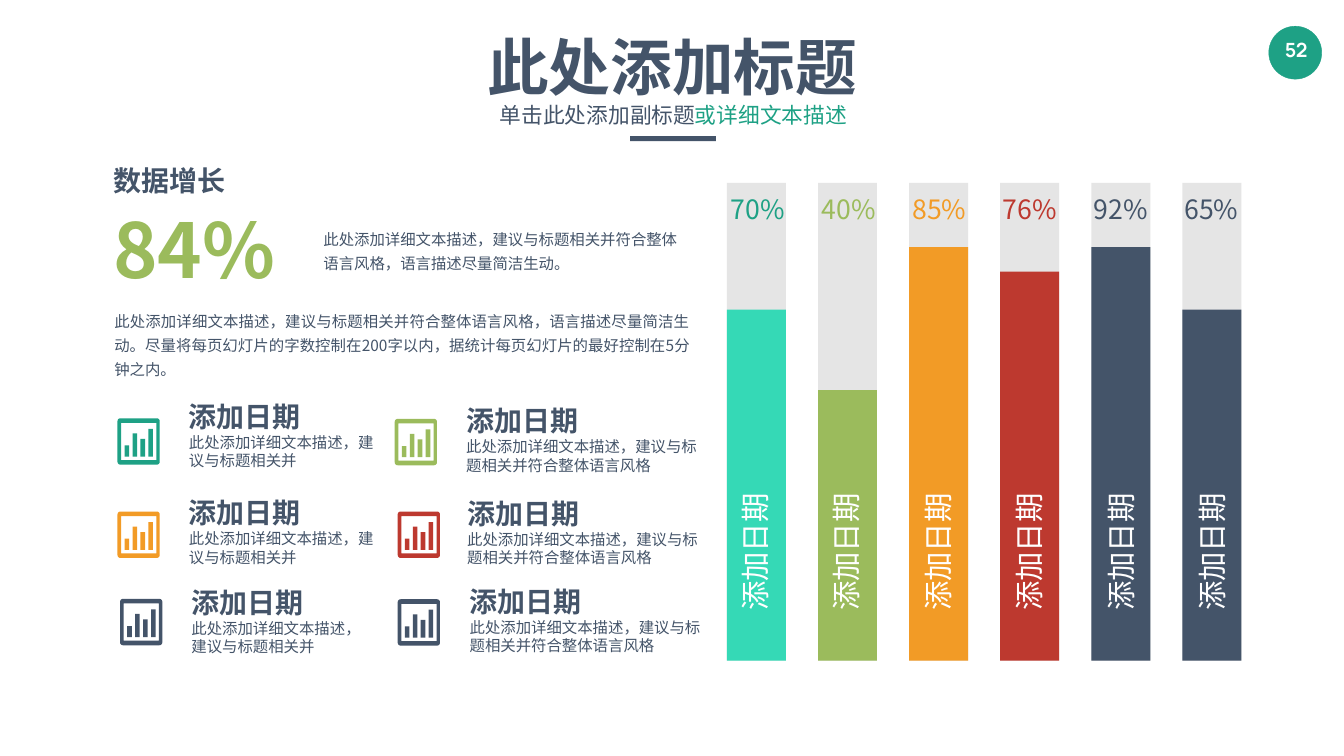
from math import cos, pi, sin

from lxml.etree import SubElement
from pptx import Presentation
from pptx.dml.color import RGBColor
from pptx.enum.shapes import MSO_SHAPE as Shape
from pptx.enum.text import MSO_ANCHOR as Anchor, MSO_AUTO_SIZE as AutoSize, PP_ALIGN as Align
from pptx.oxml.ns import qn
from pptx.util import Cm, Pt

COLORS = {
    "teal": "1EA185", "mint": "35D9B6", "green": "9BBB5C", "orange": "F29B26",
    "red": "BD392F", "navy": "445469", "track": "E5E5E5", "white": "FFFFFF",
}
DATE = "添加日期"
DETAIL = "此处添加详细文本描述，建议与标题相关并"
LONG_DETAIL = DETAIL + "符合整体语言风格"
SENTENCE = LONG_DETAIL + "，语言描述尽量简洁生动。"


def rgb(color):
    return RGBColor.from_string(COLORS[color])


def rectangle(left, top, right, bottom):
    return [(left, top), (right, top), (right, bottom), (left, bottom)]


def rounded_rectangle(width, height, radius, steps=4):
    corners = [(width - radius, height - radius), (radius, height - radius),
               (radius, radius), (width - radius, radius)]
    return [
        (x + radius * cos(angle), y + radius * sin(angle))
        for quarter, (x, y) in enumerate(corners)
        for angle in (pi / 2 * (quarter + step / steps) for step in range(steps + 1))
    ]


ICON_CONTOURS = [rounded_rectangle(2.13, 2.34, 0.15), rectangle(0.18, 0.23, 1.96, 2.11)] + [
    rectangle(0.36 + 0.4 * column, top, 0.59 + 0.4 * column, 1.93)
    for column, top in enumerate((1.37, 0.76, 1.04, 0.53))
]


class Deck:
    """Hold the text style and the current slide, and draw each kind of element."""

    font = "Noto Sans CJK SC"
    color = "navy"

    def __init__(self, slide):
        self.shapes = slide.shapes

    def paint(self, shape, color, outline=None):
        shape.shadow.inherit = False
        shape.fill.solid()
        shape.fill.fore_color.rgb = rgb(color)
        if outline:
            shape.line.color.rgb = rgb(color)
            shape.line.width = Pt(outline)
        else:
            shape.line.fill.background()

    def block(self, left, top, width, height, color, kind=Shape.RECTANGLE, outline=None):
        lengths = map(Cm, (left, top, width, height))
        self.paint(self.shapes.add_shape(kind, *lengths), color, outline)

    def icon(self, left, top, color):
        contours = [[(Cm(left + x), Cm(top + y)) for x, y in contour] for contour in ICON_CONTOURS]
        outline = self.shapes.build_freeform(*contours[0][0])
        for contour in contours:
            outline.move_to(*contour[0])
            outline.add_line_segments(contour[1:], close=True)
        self.paint(outline.convert_to_shape(), color)

    def text(self, text, box, size, color=None, font=None, bold=False, align=None, anchor=Anchor.TOP,
             insets=(0.25, 0.13), spacing=None, wrap=True, grow=True, rotation=0, tail=None):
        label = self.shapes.add_textbox(*map(Cm, box))
        label.rotation = rotation
        frame = label.text_frame
        frame.word_wrap = wrap
        frame.auto_size = AutoSize.SHAPE_TO_FIT_TEXT if grow else AutoSize.NONE
        frame.vertical_anchor = anchor
        frame.margin_left = frame.margin_right = Cm(insets[0])
        frame.margin_top = frame.margin_bottom = Cm(insets[1])
        paragraph = frame.paragraphs[0]
        paragraph.alignment = align
        paragraph.line_spacing = spacing
        parts = [(text, color or self.color)] + ([tail] if tail else [])
        for words, shade in parts:
            run = paragraph.add_run()
            run.text = words
            run.font.size, run.font.bold = Pt(size), bold
            run.font.color.rgb = rgb(shade)
            run.font.name = font or self.font
            SubElement(run.font._element, qn("a:ea"), typeface=run.font.name)

    def bar(self, index, percent, height, color, percent_color):
        left, top, width, track = 36.63 + 4.59 * index, 9.22, 2.97, 24.08
        self.block(left, top, width, track, "track")
        self.block(left, top + track - height, width, height, color)
        middle = {"anchor": Anchor.MIDDLE, "insets": (0.33, 0)}
        self.text(DATE, (33.09 + 4.61 * index, 25.27, 9.86, 1.83), 42, "white", rotation=270, **middle)
        self.text(percent, (36.02 + 4.57 * index, 9.73, 4.34, 1.63), 38, percent_color,
                  align=Align.CENTER, **middle)

    def item(self, icon_at, text_at, width, detail, color):
        left, top = text_at
        self.text(DATE, (left, top, 6.22, 1.96), 40, bold=True, wrap=False)
        self.text(detail, (left, top + 1.7, width, 2.13), 22)
        self.icon(*icon_at, color)


def main():
    presentation = Presentation()
    presentation.slide_width, presentation.slide_height = Cm(67.72), Cm(38.1)
    deck = Deck(presentation.slides.add_slide(presentation.slide_layouts[6]))

    deck.block(63.93, 1.32, 2.67, 2.67, "teal", Shape.OVAL, outline=0.5)
    deck.text("52", (64.08, 1.68, 2.46, 1.7), 28, "white", "Manrope", bold=True,
              align=Align.CENTER, insets=(0.51, 0.25), wrap=False)

    bars = [
        ("70%", 17.7, "mint", "teal"),
        ("40%", 13.64, "green", "green"),
        ("85%", 20.85, "orange", "orange"),
        ("76%", 19.61, "red", "red"),
        ("92%", 20.85, "navy", "navy"),
        ("65%", 17.7, "navy", "navy"),
    ]
    for index, values in enumerate(bars):
        deck.bar(index, *values)

    items = [
        ((5.92, 21.08), (9.27, 19.99), 9.96, DETAIL, "teal"),
        ((19.89, 21.11), (23.24, 20.22), 12.45, LONG_DETAIL, "green"),
        ((5.92, 25.78), (9.27, 24.84), 9.96, DETAIL, "orange"),
        ((20.04, 25.78), (23.29, 24.87), 12.45, LONG_DETAIL, "red"),
        ((6.05, 30.18), (9.4, 29.36), 9.75, DETAIL, "navy"),
        ((20.04, 30.2), (23.42, 29.31), 12.45, LONG_DETAIL, "navy"),
    ]
    for values in items:
        deck.item(*values)

    deck.text(SENTENCE + "尽量将每页幻灯片的字数控制在200字以内，据统计每页幻灯片的最好控制在5分钟之内。",
              (5.51, 15.32, 29.49, 3.91), 22, align=Align.JUSTIFY, spacing=1.3)
    deck.text("数据增长", (5.46, 8.1, 6.22, 1.96), 40, bold=True, wrap=False)
    deck.text(SENTENCE, (16.05, 11.2, 18.97, 2.69), 22, spacing=1.3)
    deck.text("84%", (5.46, 10.08, 8.84, 4.88), 108, "green", bold=True, wrap=False)

    deck.text("此处添加标题", (16.69, 1.35, 34.34, 4.01), 88, bold=True, align=Align.CENTER)
    deck.block(31.75, 6.86, 4.32, 0.25, "navy")
    deck.text("单击此处添加副标题", (17.73, 4.55, 32.39, 2.34), 31, align=Align.CENTER,
              insets=(0.61, 0.3), spacing=1.2, grow=False, tail=("或详细文本描述", "teal"))

    presentation.save("out.pptx")


if __name__ == "__main__":
    main()
